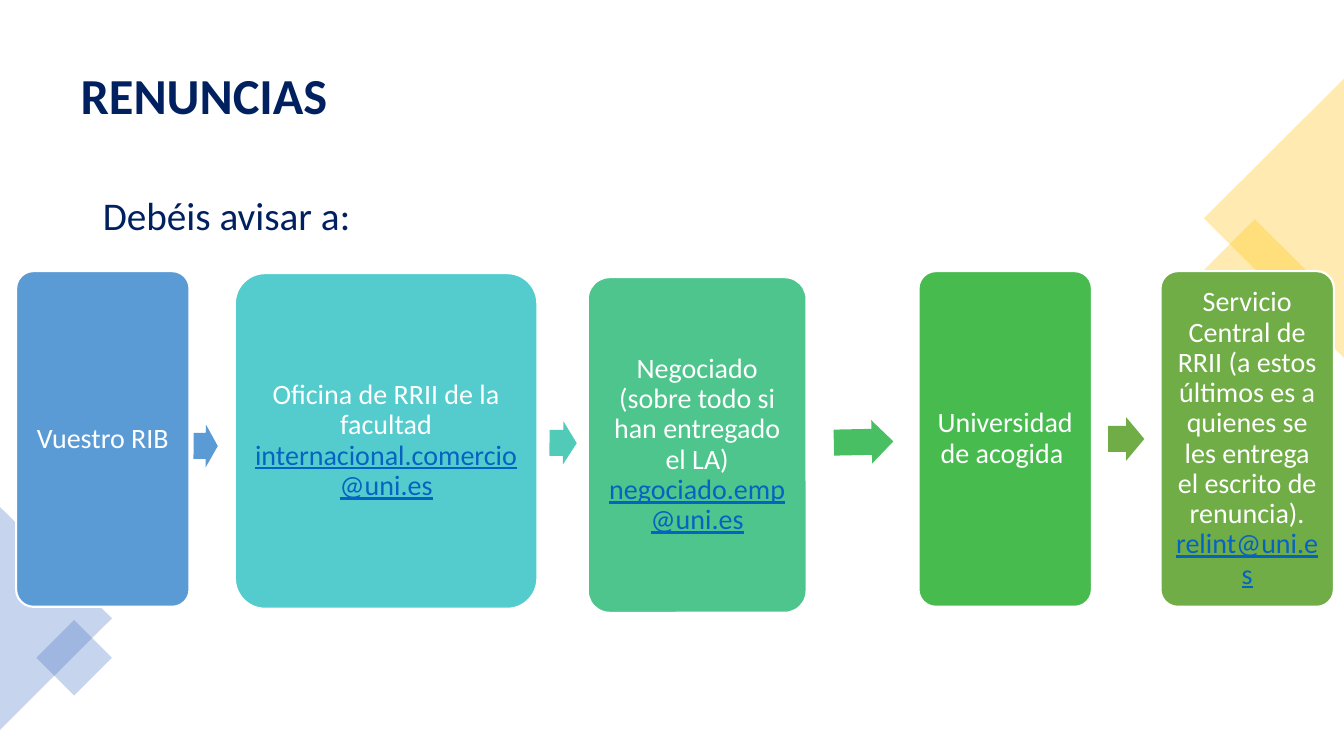
from lxml.etree import SubElement
from pptx import Presentation
from pptx.dml.color import RGBColor
from pptx.enum.shapes import MSO_SHAPE
from pptx.enum.text import MSO_ANCHOR, MSO_AUTO_SIZE, PP_ALIGN
from pptx.oxml.ns import qn
from pptx.util import Emu, Pt

PX = 9144  # 100 px to the inch
FONT = "Calibri"
NAVY = RGBColor(0x00, 0x20, 0x60)
WHITE = RGBColor(0xFF, 0xFF, 0xFF)
LINK = RGBColor(0x05, 0x63, 0xC1)
GOLD = RGBColor(0xFF, 0xC0, 0x00)
BLUE = RGBColor(0x44, 0x72, 0xC4)
SKY = RGBColor(0x5B, 0x9B, 0xD5)
OLIVE = RGBColor(0x70, 0xAD, 0x47)

STEP_HEIGHT = 333
ARROW_HEIGHT = 43

# left, top, width, height, rotation, preset, colour
DECORATIONS = [
    (1209, 232, 71, 71, 45, MSO_SHAPE.RECTANGLE, GOLD),
    (1125, 147, 277, 139, 270, MSO_SHAPE.ISOSCELES_TRIANGLE, GOLD),
    (-55, 558, 221, 111, 90, MSO_SHAPE.ISOSCELES_TRIANGLE, BLUE),
    (47, 626, 53, 53, 45, MSO_SHAPE.RECTANGLE, BLUE),
]

# left, top, width, colour, text, address
STEPS = [
    (16, 269, 172, SKY, "Vuestro RIB", ""),
    (233, 271, 300, RGBColor(0x54, 0xCC, 0xCD),
     "Oficina de RRII de la facultad ", "internacional.comercio@uni.es"),
    (583, 275, 217, RGBColor(0x4D, 0xC5, 0x8D),
     "Negociado (sobre todo si han entregado el LA) ", "negociado.emp@uni.es"),
    (911, 269, 172, RGBColor(0x48, 0xBB, 0x4F), "Universidad de acogida ", ""),
    (1151, 269, 172, OLIVE,
     "Servicio Central de RRII (a estos últimos es a quienes se les entrega "
     "el escrito de renuncia). ", "relint@uni.es"),
]

# left, top, width, rotation, colour
ARROWS = [
    (192, 421, 24, 0.4, SKY),
    (545, 418, 27, 0.8, RGBColor(0x52, 0xCA, 0xB8)),
    (827, 417, 59, 358.8, RGBColor(0x49, 0xBF, 0x64)),
    (1099, 414, 36, 0, OLIVE),
]


def px(*lengths):
    return [Emu(length * PX) for length in lengths]


def format_run(run, size, color, bold=False, underline=False):
    font = run.font
    font.name, font.size, font.bold = FONT, Pt(size), bold
    font.underline = underline
    font.color.rgb = color


def fill_placeholder(placeholder, box, text, size, anchor, bold=False):
    placeholder.left, placeholder.top, placeholder.width, placeholder.height = px(*box)
    text_frame = placeholder.text_frame
    text_frame.text = text
    text_frame.word_wrap = True
    text_frame.auto_size = MSO_AUTO_SIZE.NONE
    text_frame.vertical_anchor = anchor
    paragraph = text_frame.paragraphs[0]
    paragraph.alignment = PP_ALIGN.LEFT
    paragraph.space_before = Pt(0)
    format_run(paragraph.runs[0], size, NAVY, bold)
    return paragraph


def remove_bullet(paragraph):
    properties = paragraph._p.get_or_add_pPr()
    properties.set("marL", "0")
    properties.set("indent", "0")
    SubElement(properties, qn("a:buNone"))


def add_filled_shape(slide, preset, box, color, rotation=0):
    shape = slide.shapes.add_shape(preset, *px(*box))
    shape.shadow.inherit = False
    shape.fill.solid()
    shape.fill.fore_color.rgb = color
    shape.line.fill.background()
    shape.rotation = rotation
    return shape


def add_decoration(slide, left, top, width, height, rotation, preset, color):
    shape = add_filled_shape(slide, preset, (left, top, width, height), color, rotation)
    color_element = shape._element.spPr.find(qn("a:solidFill"))[0]
    SubElement(color_element, qn("a:alpha"), val="30000")


def add_step(slide, left, top, width, color, text, address):
    box = (left, top, width, STEP_HEIGHT)
    shape = add_filled_shape(slide, MSO_SHAPE.ROUNDED_RECTANGLE, box, color)
    shape.adjustments[0] = 0.1
    shape.line.color.rgb = WHITE
    shape.line.width = Pt(1.5)
    text_frame = shape.text_frame
    text_frame.text = text
    text_frame.word_wrap = True
    text_frame.vertical_anchor = MSO_ANCHOR.MIDDLE
    (text_frame.margin_left, text_frame.margin_top,
     text_frame.margin_right, text_frame.margin_bottom) = px(8, 8, 8, 8)
    paragraph = text_frame.paragraphs[0]
    paragraph.alignment = PP_ALIGN.CENTER
    paragraph.line_spacing = 0.9
    format_run(paragraph.runs[0], 20, WHITE)
    if address:
        run = paragraph.add_run()
        run.text = address
        format_run(run, 20, LINK, underline=True)


def add_arrow(slide, left, top, width, rotation, color):
    box = (left, top, width, ARROW_HEIGHT)
    arrow = add_filled_shape(slide, MSO_SHAPE.RIGHT_ARROW, box, color, rotation)
    arrow.adjustments[0] = 0.6
    arrow.adjustments[1] = 0.5


def main():
    presentation = Presentation()
    presentation.slide_width, presentation.slide_height = px(1333, 750)
    slide = presentation.slides.add_slide(presentation.slide_layouts[1])

    title = fill_placeholder(slide.shapes.title, (70, 35, 1193, 124), "RENUNCIAS",
                             36, MSO_ANCHOR.MIDDLE, bold=True)
    title.line_spacing = 0.9
    subtitle = fill_placeholder(slide.placeholders[1], (92, 185, 427, 57),
                                "Debéis avisar a:", 28, MSO_ANCHOR.TOP)
    subtitle.space_after = Pt(6)
    remove_bullet(subtitle)

    for decoration in DECORATIONS:
        add_decoration(slide, *decoration)
    for step in STEPS:
        add_step(slide, *step)
    for arrow in ARROWS:
        add_arrow(slide, *arrow)

    presentation.save("out.pptx")


if __name__ == "__main__":
    main()
